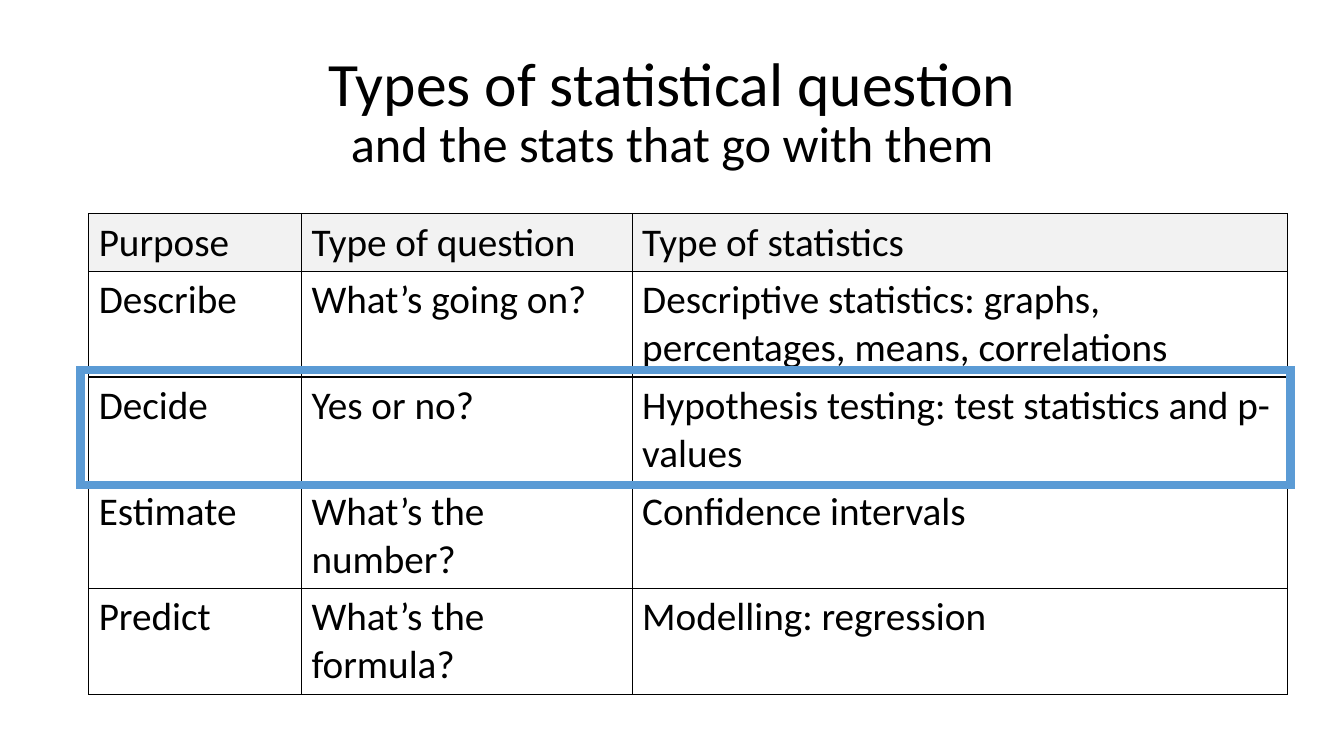
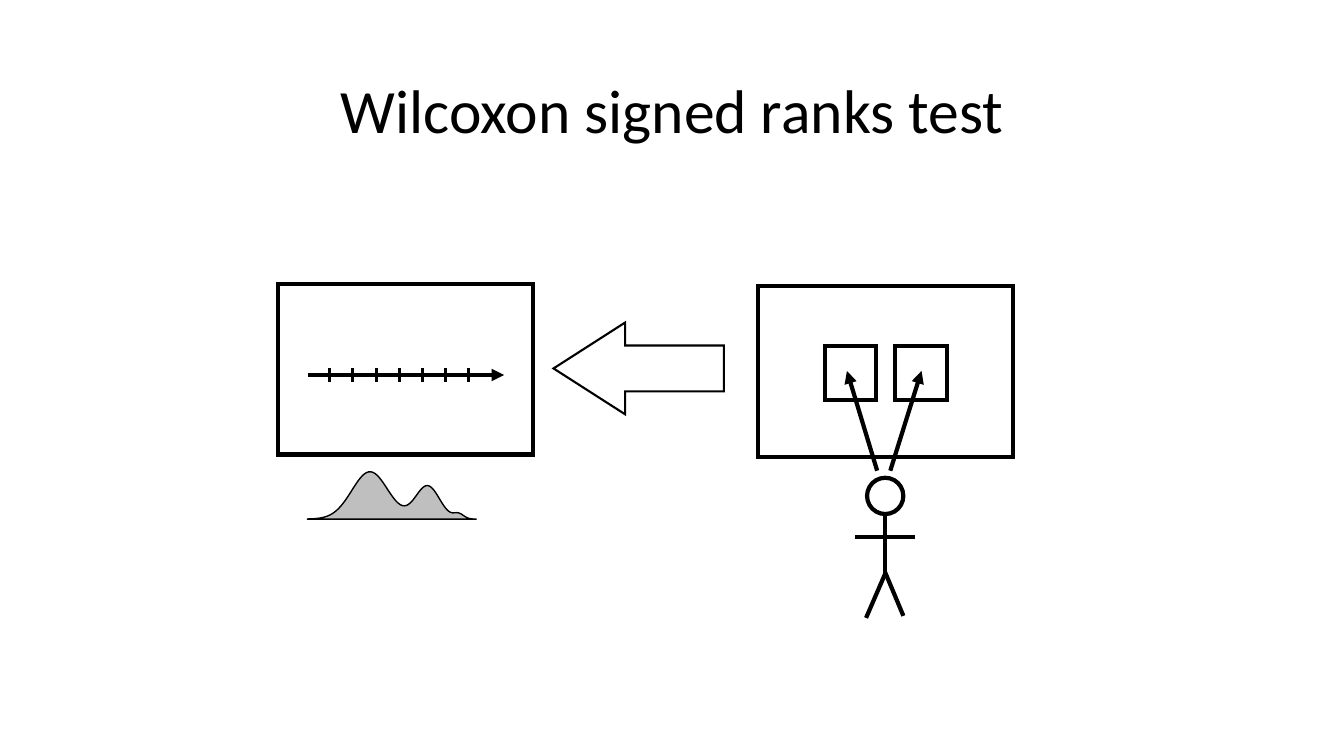
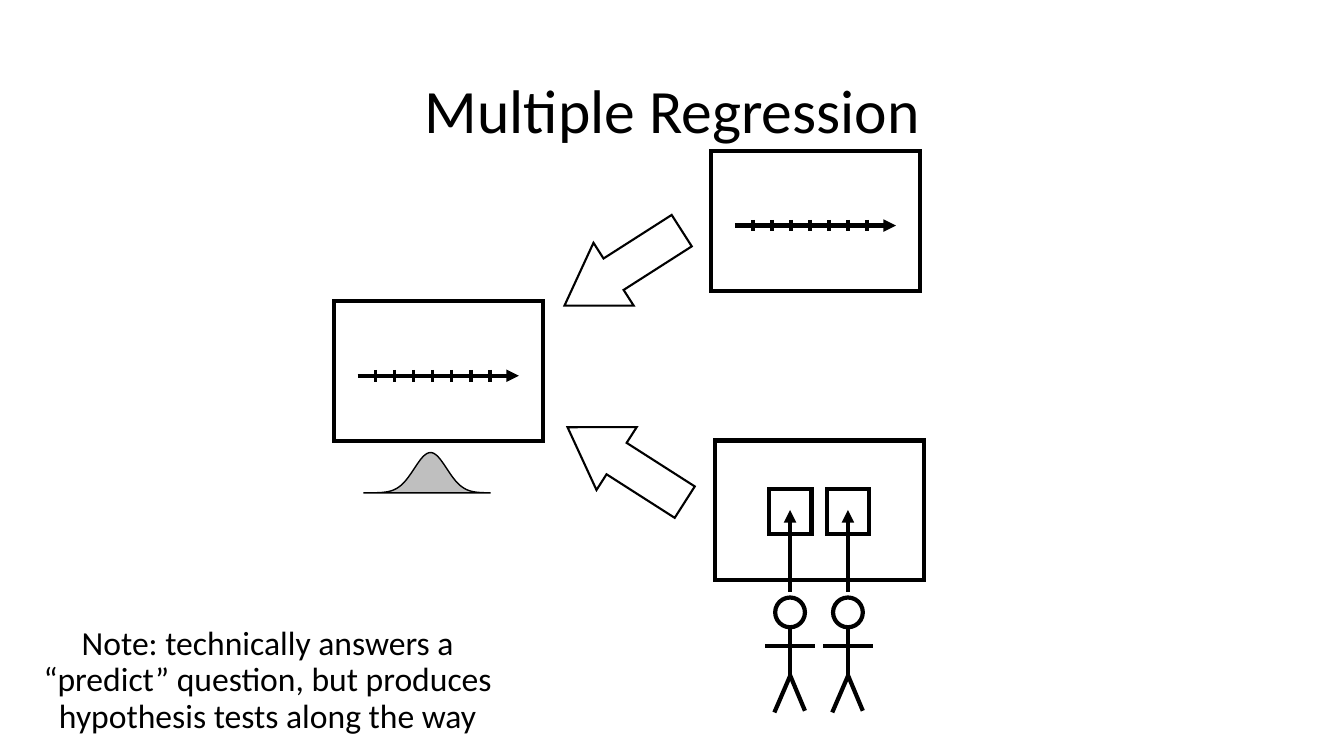
import math
from dataclasses import dataclass

from lxml import etree
from pptx import Presentation
from pptx import util as u
from pptx.dml.color import RGBColor
from pptx.enum import shapes, text
from pptx.oxml.ns import qn


@dataclass(frozen=True)
class Theme:
    font: str = "Calibri"
    ink: RGBColor = RGBColor(0, 0, 0)
    paper: RGBColor = RGBColor(255, 255, 255)
    header: RGBColor = RGBColor(0xF2, 0xF2, 0xF2)
    curve: RGBColor = RGBColor(0xBF, 0xBF, 0xBF)
    accent: RGBColor = RGBColor(0x5B, 0x9B, 0xD5)
    title: int = 44
    subtitle: int = 36
    table: int = 28
    note: int = 24
    heavy: float = 3
    tick: float = 2.25
    medium: float = 1.5
    thin: float = 1


theme = Theme()


def finish(shape, width, fill=theme.paper, ink=theme.ink):
    """Give a shape its outline, sharp corners and fill, without a shadow."""
    shape.shadow.inherit = False
    shape.line.width = u.Pt(width)
    shape.line.fill.solid()
    shape.line.color.rgb = ink
    etree.SubElement(shape.line._get_or_add_ln(), qn("a:miter"), lim="800000")
    if fill is None:
        shape.fill.background()
    else:
        shape.fill.solid()
        shape.fill.fore_color.rgb = fill
    return shape


def stroke(group, start, end, width=theme.heavy, arrow=False):
    """Draw a straight line, with an arrowhead at its end on request."""
    line = group.shapes.add_connector(
        shapes.MSO_CONNECTOR.STRAIGHT, *map(u.Inches, (*start, *end)))
    line.line.width = u.Pt(width)
    line.line.color.rgb = theme.ink
    if arrow:
        etree.SubElement(line.line._get_or_add_ln(), qn("a:tailEnd"), type="triangle")
    etree.SubElement(line._element.spPr, qn("a:effectLst"))


deck = Presentation()
deck.slide_width, deck.slide_height = u.Inches(13.33), u.Inches(7.5)
purposes, wilcoxon, regression = [
    deck.slides.add_slide(deck.slide_layouts[6]) for _ in range(3)]

# Titles and the note: centred text, one (wording, size) pair per line
title_area = (0.92, 0.4, 11.5, 1.45)
captions = [
    (purposes, title_area, [("Types of statistical question", theme.title),
                            ("and the stats that go with them", theme.subtitle)]),
    (wilcoxon, title_area, [("Wilcoxon signed ranks test", theme.title)]),
    (regression, title_area, [("Multiple Regression", theme.title)]),
    (regression, (0.18, 6.03, 4.95, 1.45),
     [("Note: technically answers a “predict” question, "
       "but produces hypothesis tests along the way", theme.note)]),
]
for page, area, lines in captions:
    box = page.shapes.add_textbox(*map(u.Inches, area))
    frame = box.text_frame
    for name, value in {"word_wrap": True,
                        "vertical_anchor": text.MSO_ANCHOR.MIDDLE}.items():
        setattr(frame, name, value)
    para = frame.paragraphs[0]
    for name, value in {"alignment": text.PP_ALIGN.CENTER, "line_spacing": 0.9}.items():
        setattr(para, name, value)
    for number, (wording, size) in enumerate(lines):
        if number:
            para.add_line_break()
        span = para.add_run()
        span.text = wording
        for name, value in {"name": theme.font, "size": u.Pt(size)}.items():
            setattr(span.font, name, value)
        span.font.color.rgb = theme.ink

# Table of question types
rows = [
    ("Purpose", "Type of question", "Type of statistics"),
    ("Describe", "What’s going on?",
     "Descriptive statistics: graphs, percentages, means, correlations"),
    ("Decide", "Yes or no?", "Hypothesis testing: test statistics and p-values"),
    ("Estimate", "What’s the number?", "Confidence intervals"),
    ("Predict", "What’s the formula?", "Modelling: regression"),
]
table = purposes.shapes.add_table(
    len(rows), 3, *map(u.Inches, (0.88, 2.12, 11.89, 4.77))).table
for name in ("first_row", "horz_banding"):
    setattr(table, name, False)
for column, width in zip(table.columns, (2.11, 3.28, 6.5)):
    column.width = u.Inches(width)
for r, row in enumerate(rows):
    table.rows[r].height = u.Inches(1.05 if r else 0.57)
    for c, wording in enumerate(row):
        cell = table.cell(r, c)
        cell.text = wording
        font = cell.text_frame.paragraphs[0].runs[0].font
        for name, value in {"name": theme.font, "size": u.Pt(theme.table)}.items():
            setattr(font, name, value)
        font.color.rgb = theme.ink
        properties = cell._tc.get_or_add_tcPr()
        for side in ("lnL", "lnR", "lnT", "lnB"):
            border = etree.SubElement(
                properties, qn(f"a:{side}"), w=str(u.Pt(theme.thin)))
            solid = etree.SubElement(border, qn("a:solidFill"))
            etree.SubElement(solid, qn("a:srgbClr"), val=str(theme.ink))
        if r:
            cell.fill.background()
        else:
            cell.fill.solid()
            cell.fill.fore_color.rgb = theme.header

# Frame around the "Decide" row
finish(purposes.shapes.add_shape(
    shapes.MSO_SHAPE.RECTANGLE, *map(u.Inches, (0.8, 3.67, 12, 1.14))),
    6, fill=None, ink=theme.accent)

# Panels are laid out at full size and scaled down on the regression page
panel_size = (2.53, 1.69)
small = 0.82

# Panels with a numeric scale: page, left, top, scale
for page, left, top, scale in [(wilcoxon, 2.76, 2.82, 1),
                               (regression, 3.31, 2.99, small),
                               (regression, 7.05, 1.5, small)]:
    group = page.shapes.add_group_shape()
    finish(group.shapes.add_shape(
        shapes.MSO_SHAPE.RECTANGLE, u.Inches(left), u.Inches(top),
        *(u.Inches(side * scale) for side in panel_size)), theme.heavy)
    axis = top + 0.9 * scale
    stroke(group, (left + 0.29 * scale, axis), (left + 2.24 * scale, axis), arrow=True)
    for number in range(7):
        x = left + (0.51 + 0.23 * number) * scale
        stroke(group, (x, axis - 0.07 * scale), (x, axis + 0.07 * scale), theme.tick)

# Panels with two categories: page, left, top, scale, people, gazes (from x, to x)
for page, left, top, scale, people, gazes in [
        (wilcoxon, 7.52, 2.84, 1, [1.26], [(1.31, 1.62), (1.18, 0.88)]),
        (regression, 7.09, 4.37, small, [0.91, 1.61], [(0.91, 0.91), (1.61, 1.61)])]:
    group = page.shapes.add_group_shape()
    boxes = [(0, 0, *panel_size), (0.66, 0.59, 0.51, 0.54), (1.36, 0.59, 0.51, 0.54)]
    heads = [(x - 0.18, 1.9, 0.36, 0.36) for x in people]
    for kind, areas in [(shapes.MSO_SHAPE.RECTANGLE, boxes),
                        (shapes.MSO_SHAPE.OVAL, heads)]:
        for x, y, width, height in areas:
            finish(group.shapes.add_shape(
                kind, u.Inches(left + x * scale), u.Inches(top + y * scale),
                u.Inches(width * scale), u.Inches(height * scale)), theme.heavy)
    # Body, legs, arms, then the arrows into the boxes
    limbs = [((x + x1, y1), (x + x2, y2), False) for x in people
             for x1, y1, x2, y2 in [(0, 2.26, 0, 2.85), (0, 2.85, -0.19, 3.29),
                                    (0, 2.84, 0.18, 3.27), (0.3, 2.49, -0.3, 2.49)]]
    looks = [((x1, 1.83), (x2, 0.84), True) for x1, x2 in gazes]
    for start, end, arrow in limbs + looks:
        stroke(group, (left + start[0] * scale, top + start[1] * scale),
               (left + end[0] * scale, top + end[1] * scale), arrow=arrow)

# Block arrows between panels: page, area, rotation
for page, area, rotation in [(wilcoxon, (5.49, 3.2, 1.69, 0.91), 180),
                             (regression, (5.49, 2.29, 1.38, 0.74), 147.4),
                             (regression, (5.52, 4.24, 1.38, 0.74), 212.6)]:
    block = finish(page.shapes.add_shape(
        shapes.MSO_SHAPE.RIGHT_ARROW, *map(u.Inches, area)), theme.medium)
    block.adjustments[0], block.adjustments[1] = 0.5, 0.78
    block.rotation = rotation

# Distribution curves: page, left, right, base, bells (centre, height, spread)
steps = 80
for page, left, right, base, bells in [
        (wilcoxon, 3.05, 4.72, 5.15,
         [(3.67, 0.47, 0.18), (4.24, 0.33, 0.12), (4.55, 0.05, 0.05)]),
        (regression, 3.61, 4.86, 4.89, [(4.27, 0.4, 0.16)])]:
    points = []
    for step in range(steps + 1):
        x = left + (right - left) * step / steps
        rise = sum(height * math.exp(-((x - centre) / spread) ** 2 / 2)
                   for centre, height, spread in bells)
        points.append((u.Inches(x), u.Inches(base - rise)))
    outline = page.shapes.build_freeform(u.Inches(left), u.Inches(base))
    outline.add_line_segments(points + [(u.Inches(right), u.Inches(base))], close=True)
    finish(outline.convert_to_shape(), theme.thin, fill=theme.curve)

deck.save("out.pptx")
